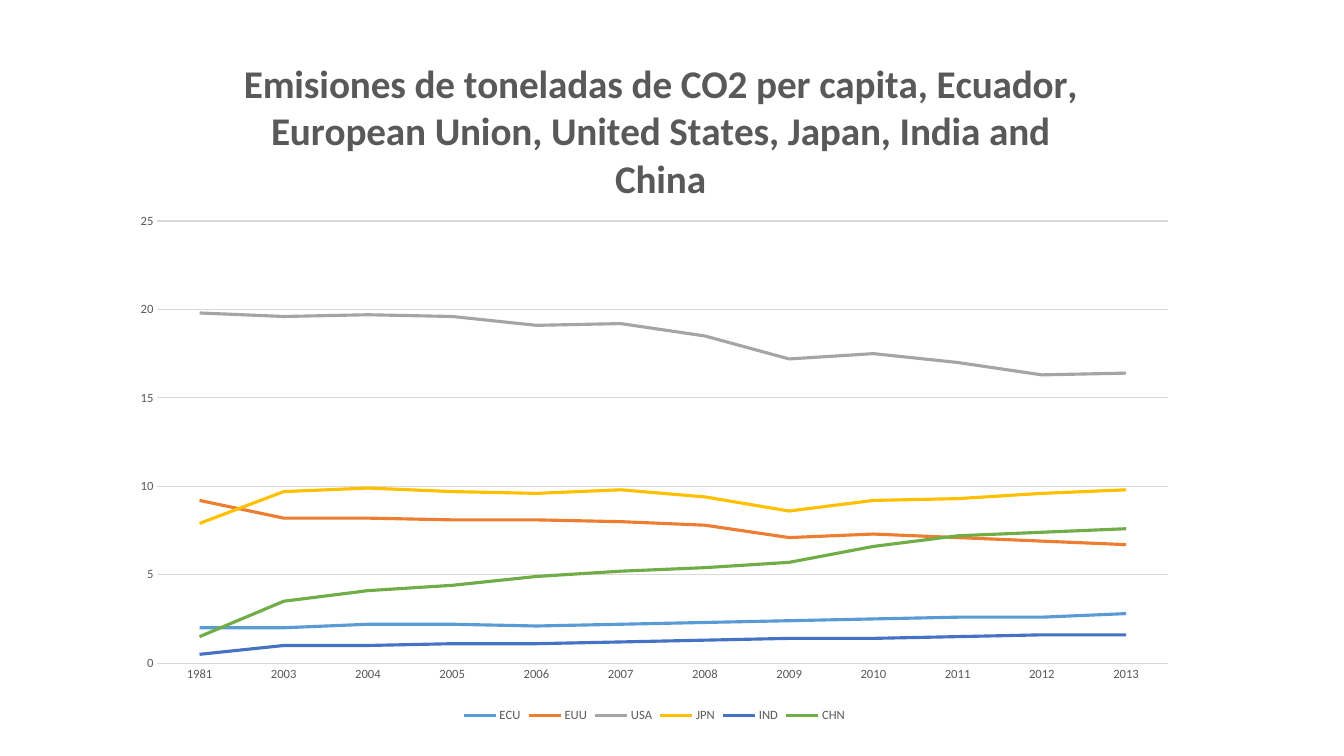
"""Build a slide with a line chart of CO2 emissions per capita."""
from lxml import etree
from pptx import Presentation
from pptx.chart.data import CategoryChartData
from pptx.dml.color import RGBColor
from pptx.enum import chart as kinds
from pptx.oxml import ns
from pptx.util import Inches, Pt

TITLE = ("Emisiones de toneladas de CO2 per capita, Ecuador, "
         "European Union, United States, Japan, India and China")
YEARS = ["1981"] + [str(year) for year in range(2003, 2014)]
COUNTRIES = [
    ("ECU", "5B9BD5", [2, 2, 2.2, 2.2, 2.1, 2.2, 2.3, 2.4, 2.5, 2.6, 2.6, 2.8]),
    ("EUU", "ED7D31", [9.2, 8.2, 8.2, 8.1, 8.1, 8, 7.8, 7.1, 7.3, 7.1, 6.9, 6.7]),
    ("USA", "A5A5A5", [19.8, 19.6, 19.7, 19.6, 19.1, 19.2, 18.5, 17.2, 17.5, 17, 16.3, 16.4]),
    ("JPN", "FFC000", [7.9, 9.7, 9.9, 9.7, 9.6, 9.8, 9.4, 8.6, 9.2, 9.3, 9.6, 9.8]),
    ("IND", "4472C4", [0.5, 1, 1, 1.1, 1.1, 1.2, 1.3, 1.4, 1.4, 1.5, 1.6, 1.6]),
    ("CHN", "70AD47", [1.5, 3.5, 4.1, 4.4, 4.9, 5.2, 5.4, 5.7, 6.6, 7.2, 7.4, 7.6]),
]


def paint(color, value):
    """Set a font or line colour from a hex string."""
    color.rgb = RGBColor.from_string(value)


def place(parent, index, **settings):
    """Give a chart part a manual layout in fractions of the chart."""
    for old in parent.findall(ns.qn("c:layout")):
        parent.remove(old)
    layout = etree.Element(ns.qn("c:layout"))
    manual = etree.SubElement(layout, ns.qn("c:manualLayout"))
    for name, value in settings.items():
        etree.SubElement(manual, ns.qn("c:" + name)).set("val", str(value))
    parent.insert(index, layout)


deck = Presentation()
deck.slide_width, deck.slide_height = Inches(13.33), Inches(7.5)
page = deck.slides.add_slide(deck.slide_layouts[6])

data = CategoryChartData()
data.categories = YEARS
for name, color, values in COUNTRIES:
    data.add_series(name, values)
chart = page.shapes.add_chart(
    kinds.XL_CHART_TYPE.LINE, Inches(1.18), Inches(0.29),
    Inches(10.62), Inches(6.92), data).chart
chart.font.name = "Calibri"
chart.font.size = Pt(9)
paint(chart.font.color, "595959")

chart.has_title = True
chart.chart_title.text_frame.text = TITLE
heading = chart.chart_title.text_frame.paragraphs[0].runs[0].font
heading.name, heading.size, heading.bold = "Calibri", Pt(28), True
paint(heading.color, "595959")
place(chart.chart_title.element if hasattr(chart.chart_title, "element")
      else chart.element.find(".//" + ns.qn("c:title")), 1,
      xMode="edge", yMode="edge", x=0.11, y=0.03) 
place(chart.element.find(".//" + ns.qn("c:plotArea")), 0,
      layoutTarget="inner", xMode="edge", yMode="edge",
      x=0.036, y=0.275, w=0.944, h=0.634)

chart.has_legend = True
chart.legend.position = kinds.XL_LEGEND_POSITION.BOTTOM
chart.legend.include_in_layout = False

for axis in (chart.category_axis, chart.value_axis):
    axis.major_tick_mark = axis.minor_tick_mark = kinds.XL_TICK_MARK.NONE
years, tonnes = chart.category_axis, chart.value_axis
tonnes.minimum_scale, tonnes.maximum_scale, tonnes.major_unit = 0, 25, 5
tonnes.format.line.fill.background()
for line in (years.format.line, tonnes.major_gridlines.format.line):
    paint(line.color, "D9D9D9")
    line.width = Pt(0.75)

for series, (name, color, values) in zip(chart.plots[0].series, COUNTRIES):
    series.smooth = False
    series.marker.style = kinds.XL_MARKER_STYLE.NONE
    paint(series.format.line.color, color)
    series.format.line.width = Pt(2.25)

deck.save("out.pptx")
